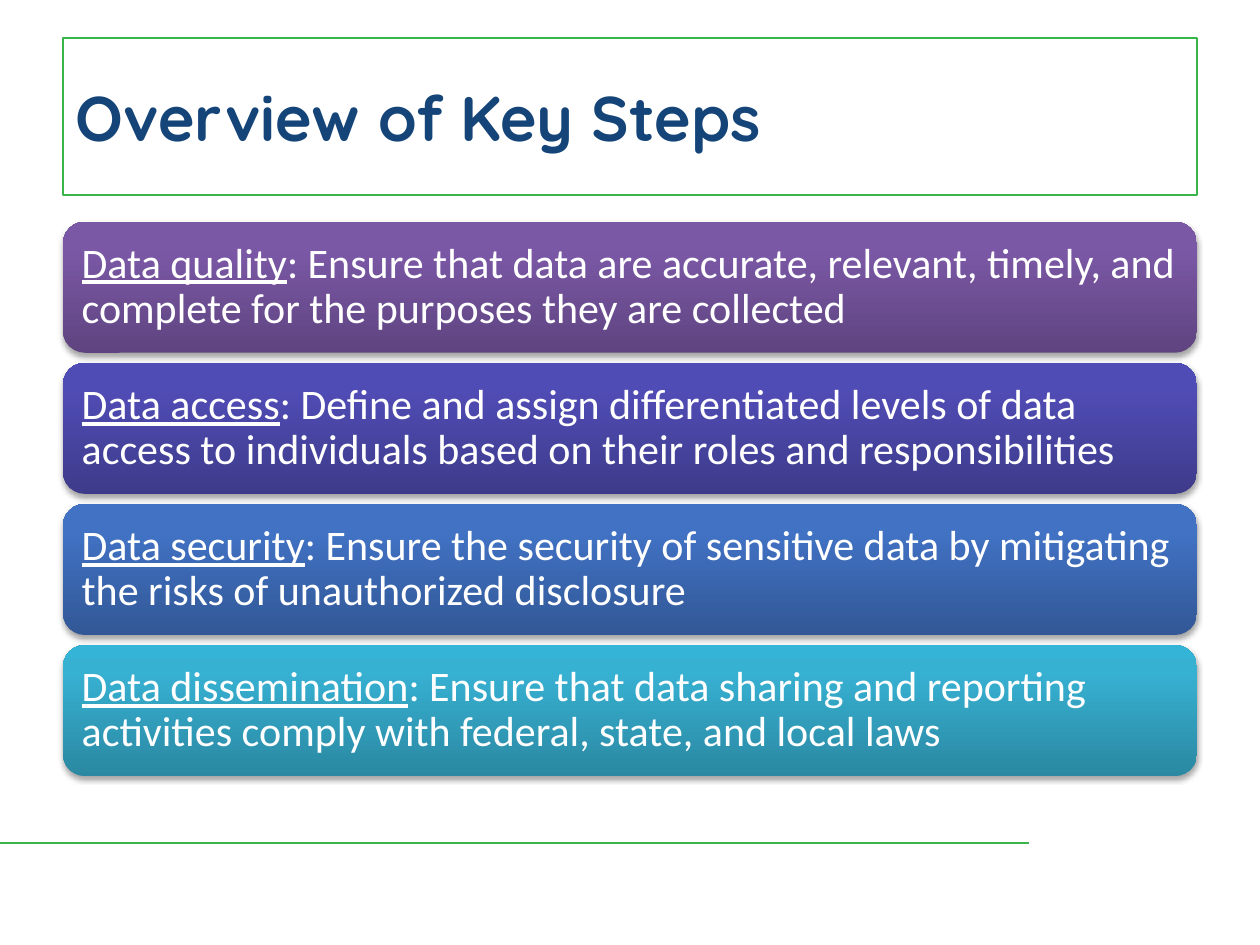
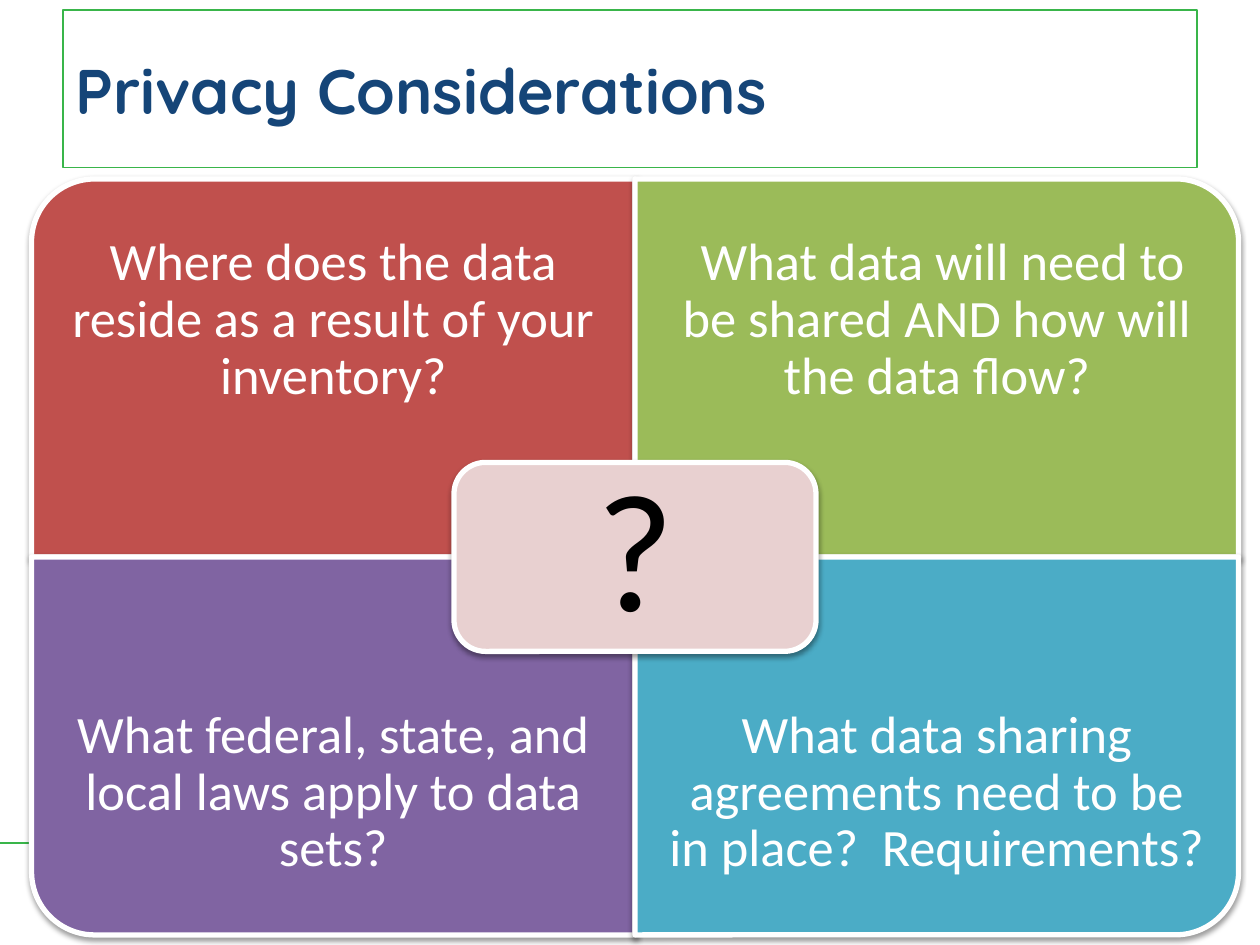
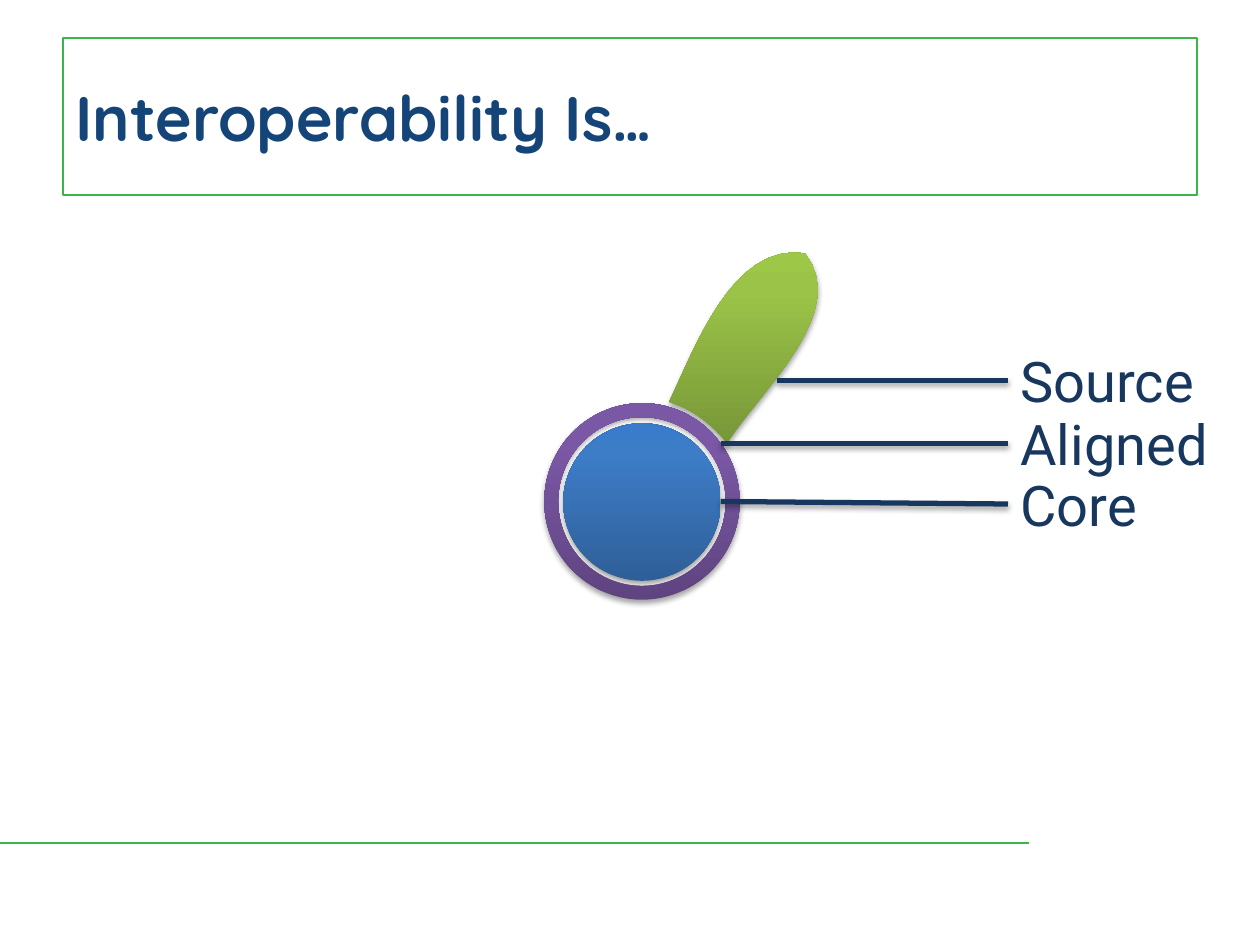
from copy import deepcopy
from dataclasses import dataclass

from lxml import etree
from pptx import Presentation
from pptx.dml.color import RGBColor
from pptx.enum.shapes import MSO_CONNECTOR, MSO_SHAPE
from pptx.enum.text import MSO_ANCHOR, MSO_AUTO_SIZE, PP_ALIGN
from pptx.oxml.ns import qn
from pptx.util import Emu, Pt

ROUND = MSO_SHAPE.ROUNDED_RECTANGLE
CORNER = MSO_SHAPE.ROUND_1_RECTANGLE
OVAL, DONUT = MSO_SHAPE.OVAL, MSO_SHAPE.DONUT
STRAIGHT = MSO_CONNECTOR.STRAIGHT
MIDDLE, LEFT, CENTER = MSO_ANCHOR.MIDDLE, PP_ALIGN.LEFT, PP_ALIGN.CENTER
GROW = MSO_AUTO_SIZE.SHAPE_TO_FIT_TEXT
SCALE = 9144  # EMU in one px, 100 px to the inch


@dataclass(frozen=True)
class Theme:
    head: str = "Quicksand"
    body: str = "Calibri"
    label: str = "Roboto"
    head_size: int = 36
    step_size: int = 24
    ask_size: int = 30
    mark_size: int = 96
    label_size: int = 32
    green: str = "39B54A"
    blue: str = "154578"
    navy: str = "17375E"
    white: str = "FFFFFF"
    black: str = "000000"
    rose: str = "E8D0D0"
    quads: tuple = ("C0504D", "9BBB59", "8064A2", "4BACC6")
    # gradients run from the bottom up
    violet: tuple = ("5F4480", "7B58A6", "7C57A8")
    indigo: tuple = ("3E3B8B", "504CB5", "4F4BB8")
    azure: tuple = ("325897", "4172C4", "3F72C7")
    cyan: tuple = ("2A88A2", "37B1D2", "34B4D6")
    core: tuple = ("2F5F99", "3D7CC7", "3A7CCB")
    leaf: tuple = ("779737", "9BC348", "9DC746")
    stops: tuple = (0, 0.8, 1)
    soft: tuple = (35, 1.8)  # shadow opacity in percent, distance in points
    firm: tuple = (38, 1.6)


T = Theme()

STEPS = [
    ("Data quality", ": Ensure that data are accurate, relevant, timely, and "
     "complete for the purposes they are collected", T.violet),
    ("Data access", ": Define and assign differentiated levels of data access to "
     "individuals based on their roles and responsibilities", T.indigo),
    ("Data security", ": Ensure the security of sensitive data by mitigating the "
     "risks of unauthorized disclosure", T.azure),
    ("Data dissemination", ": Ensure that data sharing and reporting activities "
     "comply with federal, state, and local laws", T.cyan),
]
ASKS = [
    "Where does the data reside as a result of your inventory?",
    " What data will need to be shared AND how will the data flow?",
    "What federal, state, and local laws apply to data sets?",
    "What data sharing agreements need to be in place?  Requirements?",
]
TURNS = (270, 0, 180, 90)


def px(n):
    return Emu(round(n * SCALE))


def rgb(code):
    return RGBColor.from_string(code)


def shade(item, look=None):
    """Give an item a soft shadow below it, or none at all."""
    props = item._element.spPr
    for old in props.findall(qn("a:effectLst")):
        props.remove(old)
    effects = etree.SubElement(props, qn("a:effectLst"))
    if look:
        alpha, dist = look
        outer = etree.SubElement(effects, qn("a:outerShdw"), blurRad=str(Pt(3.1)),
                                 dist=str(Pt(dist)), dir="5400000", rotWithShape="0")
        color = etree.SubElement(outer, qn("a:srgbClr"), val=T.black)
        etree.SubElement(color, qn("a:alpha"), val=str(alpha * 1000))


def blend(shape, colors):
    """Fill with a three-stop gradient, no outline, and a soft shadow."""
    shape.fill.gradient()
    shape.fill.gradient_angle = 90
    stops = shape._element.spPr.find(".//" + qn("a:gsLst"))
    stops.append(deepcopy(stops[-1]))
    for stop, place, color in zip(shape.fill.gradient_stops, T.stops, colors):
        stop.position = place
        stop.color.rgb = rgb(color)
    shape.line.fill.background()
    shade(shape, T.soft)


def flat(shape, color):
    """Fill with one colour, a white outline and a firm shadow."""
    shape.fill.solid()
    shape.fill.fore_color.rgb = rgb(color)
    shape.line.color.rgb = rgb(T.white)
    shape.line.width = Pt(3)
    shade(shape, T.firm)


def add(slide, kind, x, y, w, h):
    return slide.shapes.add_shape(kind, px(x), px(y), px(w), px(h))


def box(slide, x, y, w, h):
    return slide.shapes.add_textbox(px(x), px(y), px(w), px(h))


def write(shape, parts, font, size, color, align=LEFT, inset=None, lead=None):
    frame = shape.text_frame
    frame.word_wrap = True
    frame.vertical_anchor = MIDDLE
    if inset is not None:
        frame.margin_left = frame.margin_right = px(inset)
        frame.margin_top = frame.margin_bottom = px(inset)
    para = frame.paragraphs[0]
    para.alignment = align
    para.line_spacing = lead
    for part in parts:
        run = para.add_run()
        run.text = part
        run.font.name = font
        run.font.size = Pt(size)
        run.font.color.rgb = rgb(color)
    return para.runs


def rule(slide, x1, y1, x2, y2, color, width, look=None):
    line = slide.shapes.add_connector(STRAIGHT, px(x1), px(y1), px(x2), px(y2))
    line.line.color.rgb = rgb(color)
    line.line.width = Pt(width)
    shade(line, look)
    return line


def start(deck, title, top=30):
    """Add a slide with the footer rule and the framed title."""
    slide = deck.slides.add_slide(deck.slide_layouts[6])
    rule(slide, 0, 669, 817, 669, T.green, 1.5)
    frame = box(slide, 50, top, 900, 125)
    frame.line.color.rgb = rgb(T.green)
    frame.line.width = Pt(1)
    run, = write(frame, [title], T.head, T.head_size, T.blue)
    run.font.bold = True
    return slide


def steps(slide, x, y, w, h):
    """Stack the steps as equal bars."""
    gap = 8
    tall = (h - gap * (len(STEPS) - 1)) / len(STEPS)
    for i, (name, text, colors) in enumerate(STEPS):
        bar = add(slide, ROUND, x, y + i * (tall + gap), w, tall)
        blend(bar, colors)
        runs = write(bar, [name, text], T.body, T.step_size, T.white,
                     inset=10, lead=0.9)
        runs[0].font.underline = True


def matrix(slide, x, y, w, h):
    """Four quarters with outer round corners and a mark in the middle."""
    wide, tall = w / 2, h / 2
    depth = tall * 3 / 4
    for i, (ask, color, turn) in enumerate(zip(ASKS, T.quads, TURNS)):
        row, col = divmod(i, 2)
        left, top = x + col * wide, y + row * tall
        # a quarter turn swaps the sides about the same centre
        a, b = (tall, wide) if turn % 180 else (wide, tall)
        quad = add(slide, CORNER, left + (wide - a) / 2, top + (tall - b) / 2, a, b)
        quad.rotation = turn
        flat(quad, color)
        note = box(slide, left, top + row * (tall - depth), wide, depth)
        write(note, [ask], T.body, T.ask_size, T.white, CENTER, 23, 0.9)
    a, b = w * 0.3, tall / 2
    hub = add(slide, ROUND, x + (w - a) / 2, y + (h - b) / 2, a, b)
    flat(hub, T.rose)
    write(hub, ["?"], T.body, T.mark_size, T.black, CENTER, 40, 0.9)


def curve(p, q, r, s, count=16):
    """Points along a cubic curve, without its first."""
    for i in range(1, count + 1):
        t = i / count
        u = 1 - t
        yield tuple(px(u**3 * a + 3 * u * u * t * b + 3 * u * t * t * c + t**3 * d)
                    for a, b, c, d in zip(p, q, r, s))


def petal(slide, x, y):
    """A leaf drawn from three curves."""
    path = [(0, 119), (20, 78), (50, -8), (108, 1), (144, 48), (74, 108),
            (46, 152), (40, 144), (24, 126), (0, 119)]
    path = [(x + a, y + b) for a, b in path]
    pen = slide.shapes.build_freeform(px(path[0][0]), px(path[0][1]), scale=1.0)
    for i in range(0, 9, 3):
        pen.add_line_segments(list(curve(*path[i:i + 4])), close=i == 6)
    blend(pen.convert_to_shape(), T.leaf)


def flower(slide, x, y):
    """Core, leaf and ring, with a labelled pointer to each."""
    core = add(slide, OVAL, x + 15, y + 136, 125, 125)
    blend(core, T.core)
    petal(slide, x + 99, y)
    ring = add(slide, DONUT, x, y + 120, 155, 156)
    ring.adjustments[0] = 0.071
    blend(ring, T.violet)
    for name, top, tip in (("Source", 70, (185, 102)), ("Aligned", 120, (140, 152)),
                           ("Core", 168, (140, 198))):
        label = box(slide, x + 368, y + top, 225, 64)
        write(label, [name], T.label, T.label_size, T.navy)
        label.text_frame.auto_size = GROW
        line = rule(slide, x + tip[0], y + tip[1], x + 368, y + top + 32,
                    T.navy, 3, T.soft)
        line.end_connect(label, 1)


def main():
    deck = Presentation()
    deck.slide_width, deck.slide_height = px(1000), px(750)
    steps(start(deck, "Overview of Key Steps"), 50, 176, 900, 440)
    matrix(start(deck, "Privacy Considerations", 8), 25, 142, 958, 600)
    flower(start(deck, "Interoperability Is…"), 432, 200)
    deck.save("out.pptx")


if __name__ == "__main__":
    main()
